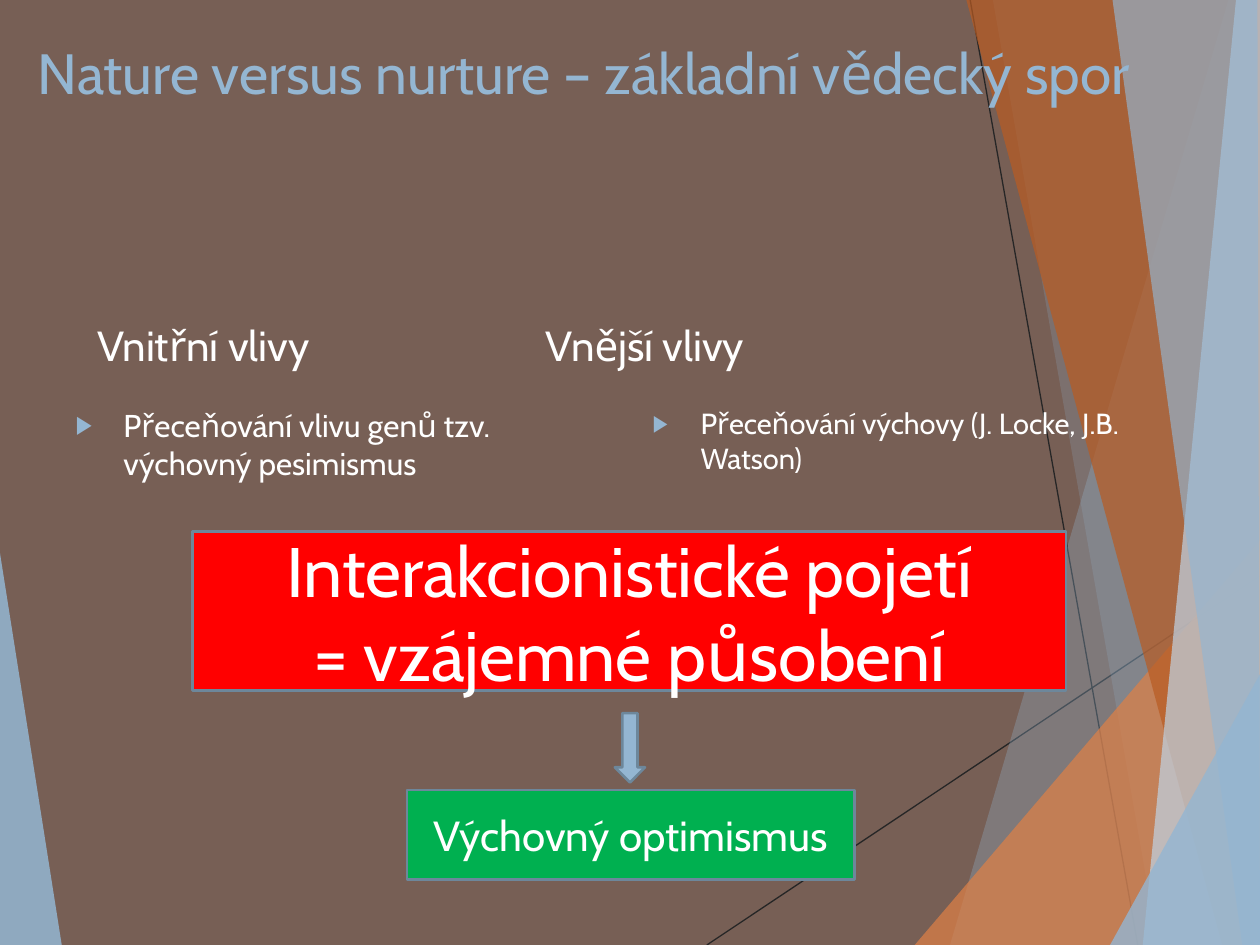
import pptx
import pptx.dml.color
import pptx.enum.shapes
import pptx.enum.text
import pptx.oxml.ns
import pptx.util
from lxml import etree

Inches = pptx.util.Inches
Pt = pptx.util.Pt
RGBColor = pptx.dml.color.RGBColor
ALIGN = pptx.enum.text.PP_ALIGN
ANCHOR = pptx.enum.text.MSO_ANCHOR
SHAPE = pptx.enum.shapes.MSO_SHAPE
qn = pptx.oxml.ns.qn

FONT = "Cabin"
BROWN = RGBColor(0x77, 0x5F, 0x55)
CHARCOAL = RGBColor(0x26, 0x26, 0x26)
BLUE = RGBColor(0x94, 0xB6, 0xD2)
PALE_BLUE = RGBColor(0xBF, 0xD3, 0xE4)
SLATE = RGBColor(0x6D, 0x87, 0x9B)
ORANGE = RGBColor(0xDD, 0x80, 0x47)
RUST = RGBColor(0xB9, 0x5B, 0x22)
RED = RGBColor(0xFF, 0x00, 0x00)
GREEN = RGBColor(0x00, 0xB0, 0x50)
WHITE = RGBColor(0xFF, 0xFF, 0xFF)

RAYS = [((5.61, 7.5), (10, 4.57)), ((7.7, 0), (9.03, 7.5))]
FACETS = [
    ([(0, 4.39), (0.49, 7.5), (0, 7.5)], BLUE, 85),
    ([(9.75, 0), (7.54, 7.5), (10, 7.5), (10, 0)], BLUE, 30),
    ([(7.88, 0), (9.19, 7.5), (10, 7.5), (10, 0)], BLUE, 20),
    ([(7.26, 7.5), (10, 4.29), (10, 7.5)], ORANGE, 72),
    ([(7.67, 0), (9.7, 7.5), (10, 7.5), (10, 0)], RUST, 70),
    ([(9.81, 0), (9.07, 7.5), (10, 7.5), (10, 0)], PALE_BLUE, 70),
    ([(8.83, 0), (9.86, 7.5), (10, 7.5), (9.98, 0)], BLUE, 65),
    ([(8.81, 7.5), (10, 5.35), (10, 7.5)], BLUE, 80),
]


def add_ray(slide, start, end):
    ray = slide.shapes.add_connector(
        pptx.enum.shapes.MSO_CONNECTOR.STRAIGHT,
        *(Inches(value) for value in start + end))
    ray.line.color.rgb = CHARCOAL
    ray.line.width = Pt(0.75)
    etree.SubElement(ray.element.spPr, qn("a:effectLst"))


def add_facet(slide, corners, color, opacity):
    points = [(Inches(x), Inches(y)) for x, y in corners]
    builder = slide.shapes.build_freeform(*points[0])
    builder.add_line_segments(points[1:], close=True)
    facet = builder.convert_to_shape()
    facet.shadow.inherit = False
    facet.fill.solid()
    facet.fill.fore_color.rgb = color
    facet.line.fill.background()
    color_element = facet.element.spPr.find(qn("a:solidFill"))[0]
    etree.SubElement(color_element, qn("a:alpha"), val=str(opacity * 1000))


def write_line(paragraph, text, size, color=WHITE, align=ALIGN.LEFT):
    paragraph.alignment = align
    paragraph.space_before = Pt(0)
    run = paragraph.add_run()
    run.text = text
    run.font.name = FONT
    run.font.size = Pt(size)
    run.font.bold = False
    run.font.color.rgb = color


def add_bullet(paragraph):
    properties = paragraph._p.get_or_add_pPr()
    properties.set("marL", str(Inches(0.38)))
    properties.set("indent", str(-Inches(0.38)))
    bullet_color = etree.SubElement(properties, qn("a:buClr"))
    etree.SubElement(bullet_color, qn("a:srgbClr"), val=str(BLUE))
    etree.SubElement(properties, qn("a:buSzPct"), val="80000")
    etree.SubElement(properties, qn("a:buFont"), typeface="Wingdings 3")
    properties[-1].set("typeface", "Arial")
    etree.SubElement(properties, qn("a:buChar"), char="▶")


def fill_placeholder(slide, index, box, text, size, anchor,
                     color=WHITE, bulleted=False):
    placeholder = slide.placeholders[index]
    (placeholder.left, placeholder.top,
     placeholder.width, placeholder.height) = map(Inches, box)
    frame = placeholder.text_frame
    frame.word_wrap = True
    frame.auto_size = pptx.enum.text.MSO_AUTO_SIZE.NONE
    frame.vertical_anchor = anchor
    paragraph = frame.paragraphs[0]
    if bulleted:
        frame.margin_top = Inches(0.89)
        add_bullet(paragraph)
    write_line(paragraph, text, size, color)
    slide.shapes.element.append(placeholder.element)


def add_block(slide, kind, box, color, lines=(), size=24):
    block = slide.shapes.add_shape(kind, *map(Inches, box))
    block.shadow.inherit = False
    block.fill.solid()
    block.fill.fore_color.rgb = color
    block.line.color.rgb = SLATE
    block.line.width = Pt(1.5)
    frame = block.text_frame
    frame.word_wrap = True
    frame.vertical_anchor = ANCHOR.MIDDLE
    for number, text in enumerate(lines):
        paragraph = frame.add_paragraph() if number else frame.paragraphs[0]
        write_line(paragraph, text, size, align=ALIGN.CENTER)


def main():
    presentation = pptx.Presentation()
    presentation.slide_width = Inches(10)
    presentation.slide_height = Inches(7.5)
    slide = presentation.slides.add_slide(
        presentation.slide_layouts.get_by_name("Comparison"))
    slide.background.fill.solid()
    slide.background.fill.fore_color.rgb = BROWN

    for start, end in RAYS:
        add_ray(slide, start, end)
    for corners, color, opacity in FACETS:
        add_facet(slide, corners, color, opacity)

    fill_placeholder(slide, 0, (0.2, 0.25, 9.53, 1),
                     "Nature versus nurture – základní vědecký spor",
                     32.4, ANCHOR.TOP, BLUE)
    fill_placeholder(slide, 1, (0.67, 2.36, 3.38, 0.63),
                     "Vnitřní vlivy", 24, ANCHOR.BOTTOM)
    fill_placeholder(slide, 2, (0.5, 2.33, 4.42, 1.57),
                     "Přeceňování vlivu genů tzv. výchovný pesimismus",
                     18, ANCHOR.TOP, bulleted=True)
    fill_placeholder(slide, 3, (4.23, 2.36, 3.38, 0.63),
                     "Vnější vlivy", 24, ANCHOR.BOTTOM)
    fill_placeholder(slide, 4, (5.08, 2.33, 4.42, 1.34),
                     "Přeceňování výchovy (J. Locke, J.B. Watson)",
                     16.6, ANCHOR.TOP, bulleted=True)

    add_block(slide, SHAPE.RECTANGLE, (1.53, 4.22, 6.93, 1.26), RED,
              ["Interakcionistické pojetí", "= vzájemné působení"], 40)
    add_block(slide, SHAPE.DOWN_ARROW, (4.88, 5.66, 0.24, 0.55), BLUE)
    add_block(slide, SHAPE.RECTANGLE, (3.23, 6.27, 3.55, 0.71), GREEN,
              ["Výchovný optimismus"])

    presentation.save("out.pptx")


if __name__ == "__main__":
    main()
